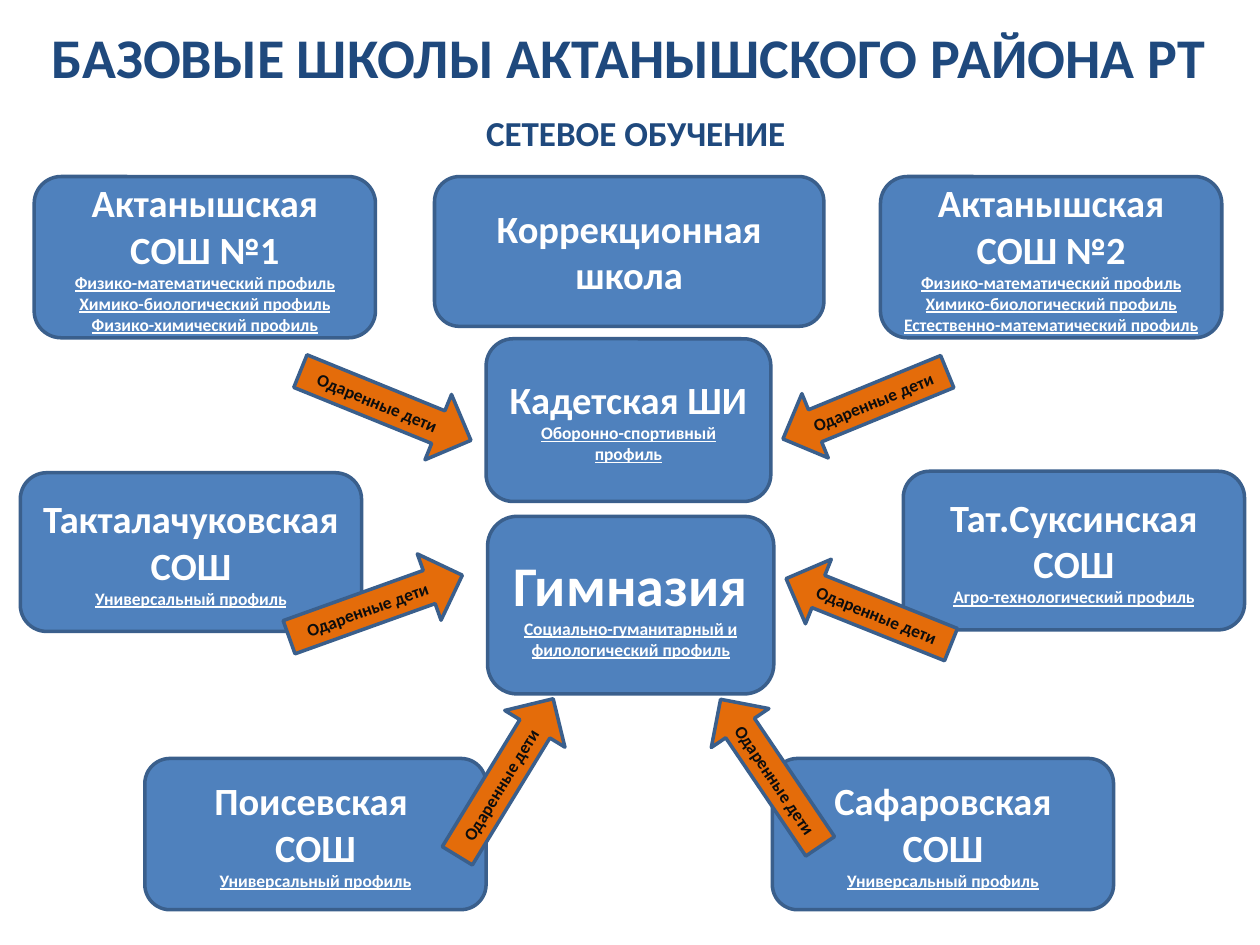
from pptx import Presentation
from pptx.dml.color import RGBColor
from pptx.enum import shapes, text
from pptx.util import Cm, Pt

NAVY = RGBColor(0x1F, 0x49, 0x7D)
BLUE = RGBColor(0x4F, 0x81, 0xBD)
OUTLINE = RGBColor(0x3A, 0x5F, 0x8C)
ORANGE = RGBColor(0xE4, 0x6C, 0x0A)
WHITE = RGBColor(0xFF, 0xFF, 0xFF)
BLACK = RGBColor(0x0D, 0x0D, 0x0D)

SCHOOL_W = 6.88
UNIVERSAL = "Универсальный профиль"
PHYSICS = "Физико-математический профиль"
BIOLOGY = "Химико-биологический профиль"

SCHOOLS = [
    (9.8, 6.83, 5.74, 3.28, ["Кадетская ШИ"], ["Оборонно-спортивный профиль"], 22),
    (8.76, 3.56, 7.85, 3.02, ["Коррекционная школа"], [], 22),
    (9.83, 10.41, 5.77, 3.58, ["Гимназия"],
     ["Социально-гуманитарный и филологический профиль"], 32),
    (0.69, 3.56, SCHOOL_W, 3.25, ["Актанышская СОШ №1"],
     [PHYSICS, BIOLOGY, "Физико-химический профиль"], 22),
    (0.41, 9.53, SCHOOL_W, 3.2, ["Такталачуковская СОШ"], [UNIVERSAL], 22),
    (2.92, 15.29, SCHOOL_W, 3.05, ["Поисевская ", "СОШ"], [UNIVERSAL], 22),
    (17.75, 3.56, SCHOOL_W, 3.25, ["Актанышская СОШ №2"],
     [PHYSICS, BIOLOGY, "Естественно-математический профиль"], 22),
    (18.21, 9.5, SCHOOL_W, 3.2, ["Тат.Суксинская СОШ"],
     ["Агро-технологический профиль"], 22),
    (15.57, 15.29, SCHOOL_W, 3.05, ["Сафаровская СОШ"], [UNIVERSAL], 22),
]
RIGHT_ARROWS = [(5.92, 7.47, 22.1), (8.33, 14.96, 301.4), (5.72, 11.51, 340.3)]
LEFT_ARROWS = [(15.65, 7.47, 337.7), (15.72, 11.63, 21.8), (13.74, 14.88, 55.9)]


def add_text(tf, content, size, color, underline=None):
    """Write one centred bold paragraph, filling the empty first one if free."""
    p = tf.paragraphs[0] if not tf.paragraphs[0].runs else tf.add_paragraph()
    p.alignment = text.PP_ALIGN.CENTER
    r = p.add_run()
    r.text = content
    r.font.name = "Calibri"
    r.font.size = Pt(size)
    r.font.bold = True
    r.font.underline = underline
    r.font.color.rgb = color


def add_heading(s, x, y, w, h, content, size, anchor):
    """Add a navy heading in a text box."""
    tf = s.shapes.add_textbox(Cm(x), Cm(y), Cm(w), Cm(h)).text_frame
    tf.word_wrap = True
    tf.vertical_anchor = anchor
    add_text(tf, content, size, NAVY)


def add_block(s, kind, x, y, w, h, fill):
    """Add an outlined shape with middle-anchored wrapping text."""
    sp = s.shapes.add_shape(kind, Cm(x), Cm(y), Cm(w), Cm(h))
    sp.shadow.inherit = False
    sp.fill.solid()
    sp.fill.fore_color.rgb = fill
    sp.line.color.rgb = OUTLINE
    sp.line.width = Pt(2)
    sp.text_frame.word_wrap = True
    sp.text_frame.vertical_anchor = text.MSO_ANCHOR.MIDDLE
    return sp


def add_school(s, x, y, w, h, names, profiles, size):
    """Add a school box with its name and underlined profiles."""
    sp = add_block(s, shapes.MSO_SHAPE.ROUNDED_RECTANGLE, x, y, w, h, BLUE)
    for name in names:
        add_text(sp.text_frame, name, size, WHITE)
    for profile in profiles:
        add_text(sp.text_frame, profile, 10, WHITE, underline=True)


def add_arrow(s, kind, x, y, w, h, angle):
    """Add a rotated labelled block arrow."""
    sp = add_block(s, kind, x, y, w, h, ORANGE)
    sp.rotation = angle
    add_text(sp.text_frame, "Одаренные дети", 10, BLACK)


def main():
    """Build the slide and save it."""
    prs = Presentation()
    prs.slide_width, prs.slide_height = Cm(25.4), Cm(19.05)
    s = prs.slides.add_slide(prs.slide_layouts[6])
    add_heading(s, 0.33, 0.53, 24.69, 1.22, "БАЗОВЫЕ ШКОЛЫ АКТАНЫШСКОГО РАЙОНА РТ",
                32, text.MSO_ANCHOR.MIDDLE)
    add_heading(s, 6.76, 2.13, 12.12, 0.99, "СЕТЕВОЕ ОБУЧЕНИЕ", 20, text.MSO_ANCHOR.TOP)
    for school in SCHOOLS:
        add_school(s, *school)
    for x, y, angle in RIGHT_ARROWS:
        add_arrow(s, shapes.MSO_SHAPE.RIGHT_ARROW, x, y, 3.71, 1.42, angle)
    for x, y, angle in LEFT_ARROWS:
        add_arrow(s, shapes.MSO_SHAPE.LEFT_ARROW, x, y, 3.58, 1.4, angle)
    prs.save("out.pptx")


if __name__ == "__main__":
    main()
